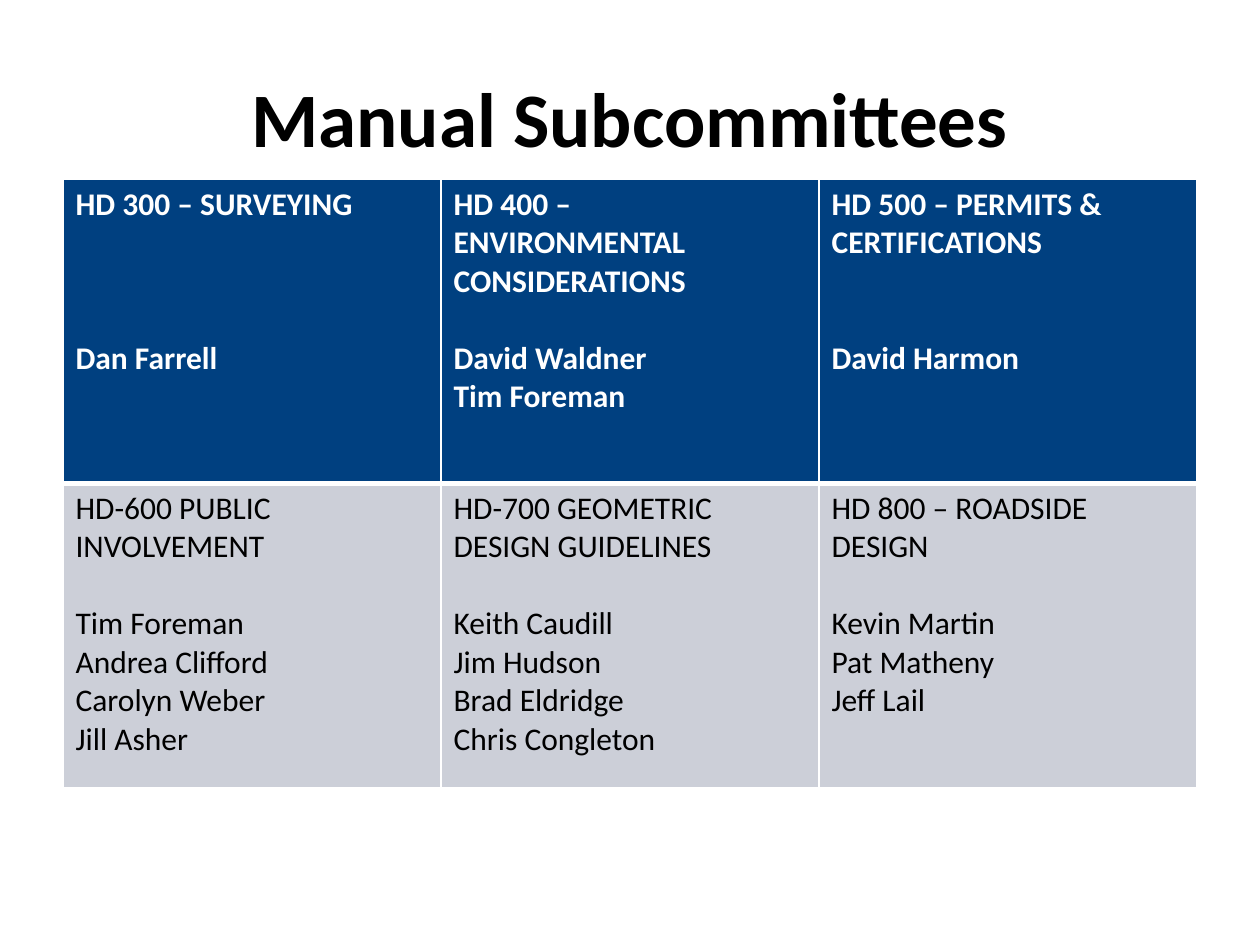
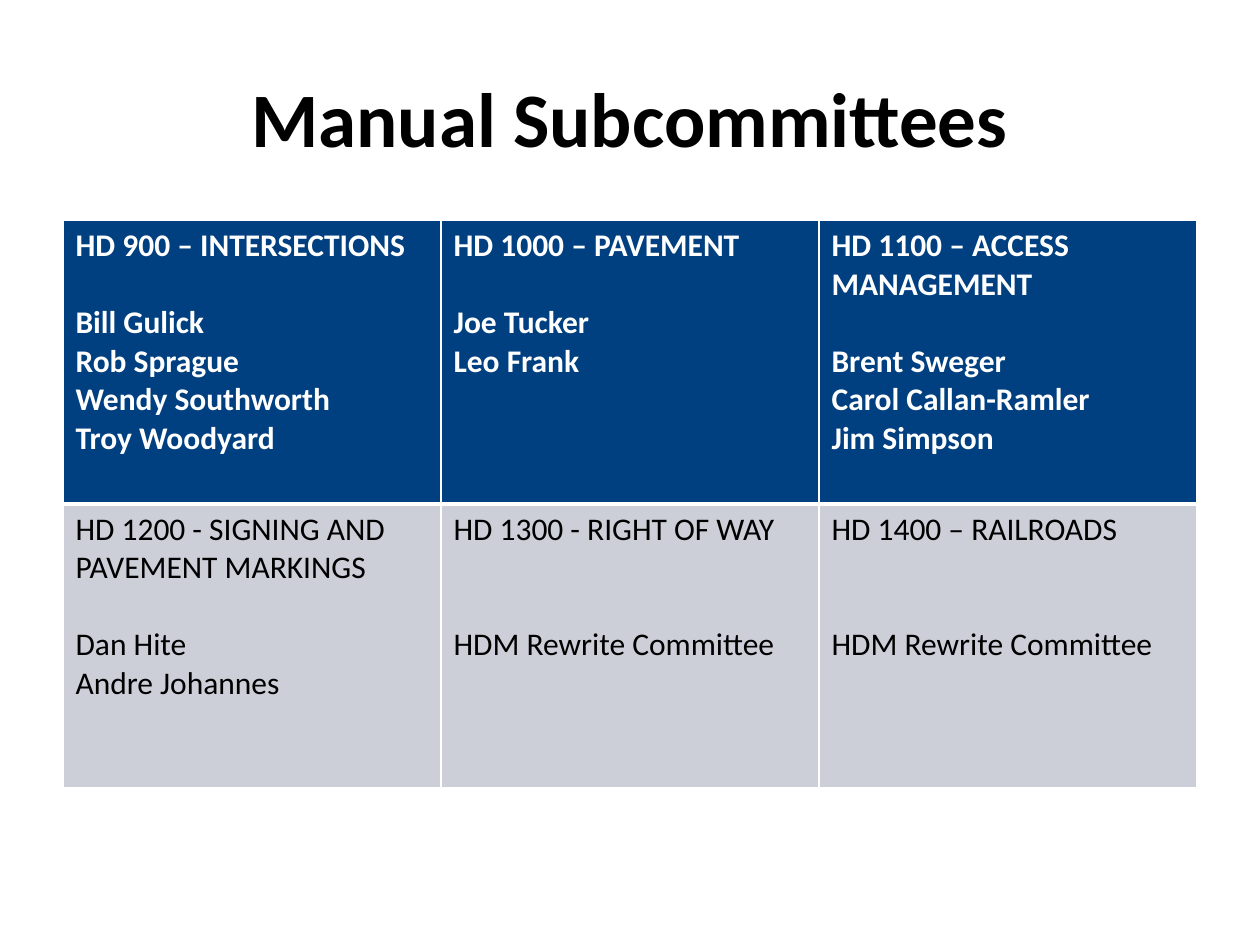
"""Builds two slides that list the manual subcommittees and their members."""
from lxml import etree
from pptx import Presentation
from pptx import util as u
from pptx.dml import color
from pptx.enum import text
from pptx.oxml import ns

PX = 9144
FONT = "Calibri"
BLACK, WHITE, NAVY, GREY = "000000", "FFFFFF", "004080", "CCCFD8"
LINE_HEIGHT = 22
ROW_STYLES = [
    {"fill": NAVY, "ink": WHITE, "bold": True, "edges": {"L": 1, "R": 1, "T": 1, "B": 3}},
    {"fill": GREY, "ink": BLACK, "bold": False, "edges": {"L": 1, "R": 1, "T": 3, "B": 1}},
]

# Each committee: heading, lines left free below it, members.
SLIDES = [
    (142, 483, [
        [("HD 300 – SURVEYING", 3, ["Dan Farrell"]),
         ("HD 400 – ENVIRONMENTAL CONSIDERATIONS", 1, ["David Waldner", "Tim Foreman"]),
         ("HD 500 – PERMITS & CERTIFICATIONS", 2, ["David Harmon"])],
        [("HD-600 PUBLIC INVOLVEMENT", 1,
          ["Tim Foreman", "Andrea Clifford", "Carolyn Weber", "Jill Asher"]),
         ("HD-700 GEOMETRIC DESIGN GUIDELINES", 1,
          ["Keith Caudill", "Jim Hudson", "Brad Eldridge", "Chris Congleton"]),
         ("HD 800 – ROADSIDE DESIGN", 1, ["Kevin Martin", "Pat Matheny", "Jeff Lail"])],
    ]),
    (175, 450, [
        [("HD 900 – INTERSECTIONS", 1,
          ["Bill Gulick", "Rob Sprague", "Wendy Southworth", "Troy Woodyard"]),
         ("HD 1000 – PAVEMENT", 1, ["Joe Tucker", "Leo Frank"]),
         ("HD 1100 – ACCESS MANAGEMENT", 1,
          ["Brent Sweger", "Carol Callan-Ramler", "Jim Simpson"])],
        [("HD 1200 - SIGNING AND PAVEMENT MARKINGS", 1, ["Dan Hite", "Andre Johannes"]),
         ("HD 1300 - RIGHT OF WAY", 2, ["HDM Rewrite Committee"]),
         ("HD 1400 – RAILROADS", 2, ["HDM Rewrite Committee"])],
    ]),
]


def rgb(value):
    return color.RGBColor.from_string(value)


def style_font(font, size, ink, bold):
    font.name = FONT
    font.size = u.Pt(size)
    font.bold = bold
    font.color.rgb = rgb(ink)


deck = Presentation()
deck.slide_width, deck.slide_height = 1000 * PX, 750 * PX

for top, height, committee_rows in SLIDES:
    slide = deck.slides.add_slide(deck.slide_layouts[5])
    slide.background.fill.solid()
    slide.background.fill.fore_color.rgb = rgb(WHITE)

    title = slide.shapes.title
    title.left, title.top, title.width, title.height = 50 * PX, 30 * PX, 900 * PX, 125 * PX
    title.text_frame.text = "Manual Subcommittees"
    title.text_frame.vertical_anchor = text.MSO_ANCHOR.MIDDLE
    heading = title.text_frame.paragraphs[0]
    heading.alignment = text.PP_ALIGN.CENTER
    style_font(heading.runs[0].font, 44, BLACK, True)

    committees = slide.shapes.add_table(
        2, 3, 50 * PX, top * PX, 900 * PX, height * PX).table
    for r, (style, row) in enumerate(zip(ROW_STYLES, committee_rows)):
        for c, (name, free_lines, members) in enumerate(row):
            cell = committees.cell(r, c)
            properties = cell._tc.get_or_add_tcPr()
            for side, points in style["edges"].items():
                edge = etree.SubElement(properties, ns.qn(f"a:ln{side}"), w=str(u.Pt(points)))
                paint = etree.SubElement(edge, ns.qn("a:solidFill"))
                etree.SubElement(paint, ns.qn("a:srgbClr"), val=WHITE)
            cell.fill.solid()
            cell.fill.fore_color.rgb = rgb(style["fill"])

            cell.text_frame.text = "\n".join([name, *members])
            paragraphs = cell.text_frame.paragraphs
            paragraphs[1].space_before = u.Pt(free_lines * LINE_HEIGHT)
            for paragraph in paragraphs:
                style_font(paragraph.runs[0].font, 18, style["ink"], style["bold"])

deck.save("out.pptx")
